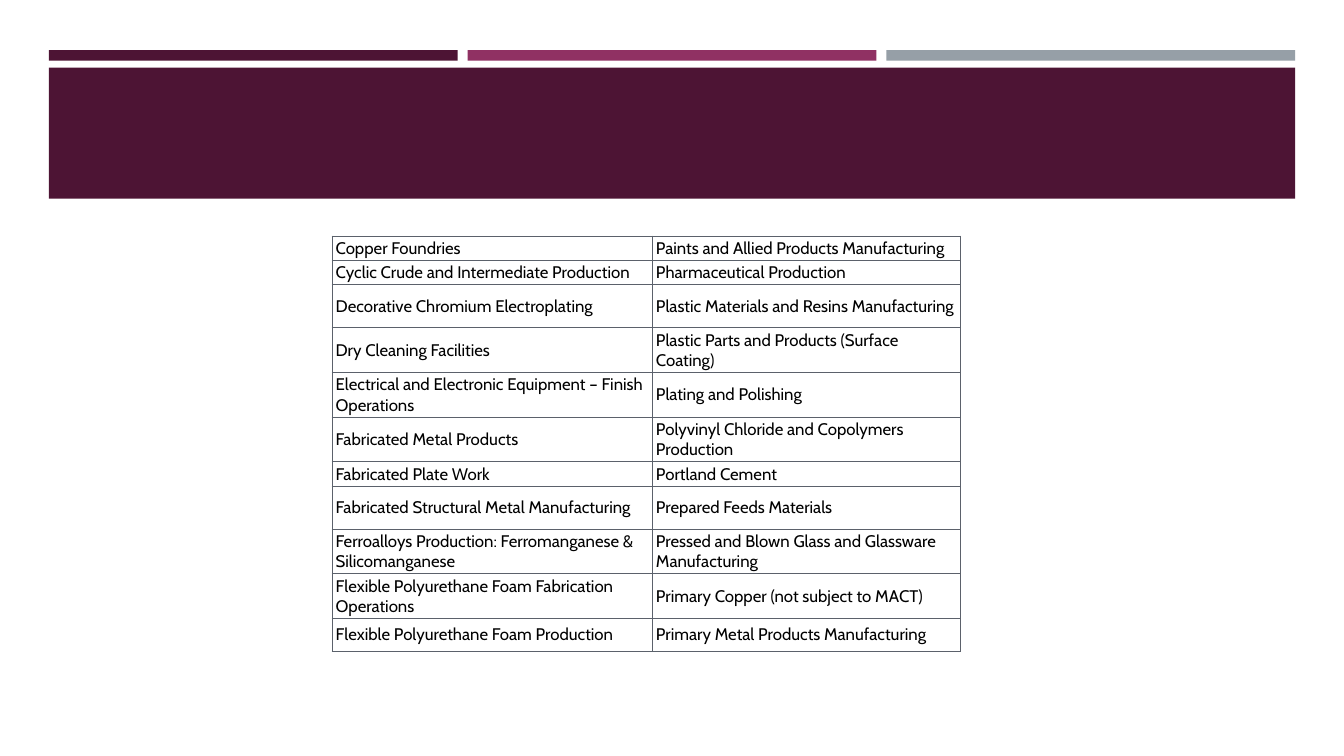
import pptx
import pptx.dml.color
import pptx.enum.shapes
import pptx.enum.text
import pptx.oxml
import pptx.oxml.ns
import pptx.util

Pt = pptx.util.Pt
RGBColor = pptx.dml.color.RGBColor

PLUM = RGBColor(0x4D, 0x14, 0x34)
MAGENTA = RGBColor(0x90, 0x31, 0x63)
SILVER = RGBColor(0x96, 0x9F, 0xA7)
SLATE = RGBColor(0x5B, 0x61, 0x6B)
BLACK = RGBColor(0, 0, 0)
WHITE = RGBColor(255, 255, 255)

FONT = "Cabin"
ONE_LINE, TWO_LINES, LAST_LINE = 17.4, 30.8, 23.3
COLUMN_WIDTHS = (228.8, 219.8)
SOURCES = [
    (ONE_LINE, "Copper Foundries", "Paints and Allied Products Manufacturing"),
    (ONE_LINE, "Cyclic Crude and Intermediate Production", "Pharmaceutical Production"),
    (TWO_LINES, "Decorative Chromium Electroplating", "Plastic Materials and Resins Manufacturing"),
    (TWO_LINES, "Dry Cleaning Facilities", "Plastic Parts and Products (Surface Coating)"),
    (TWO_LINES, "Electrical and Electronic Equipment – Finish Operations", "Plating and Polishing"),
    (TWO_LINES, "Fabricated Metal Products", "Polyvinyl Chloride and Copolymers Production"),
    (ONE_LINE, "Fabricated Plate Work", "Portland Cement"),
    (TWO_LINES, "Fabricated Structural Metal Manufacturing", "Prepared Feeds Materials"),
    (TWO_LINES, "Ferroalloys Production: Ferromanganese & Silicomanganese",
     "Pressed and Blown Glass and Glassware Manufacturing"),
    (TWO_LINES, "Flexible Polyurethane Foam Fabrication Operations", "Primary Copper (not subject to MACT)"),
    (LAST_LINE, "Flexible Polyurethane Foam Production", "Primary Metal Products Manufacturing"),
]


def add_block(page, left, top, width, height, color):
    """Draw one plain filled rectangle."""
    block = page.shapes.add_shape(
        pptx.enum.shapes.MSO_SHAPE.RECTANGLE, Pt(left), Pt(top), Pt(width), Pt(height))
    block.shadow.inherit = False
    block.fill.solid()
    block.fill.fore_color.rgb = color
    block.line.fill.background()


def add_header(page, left, top, width, height):
    """Draw three accent bars above a title band that fills the rest of the box."""
    gap, bar_height, band_offset = 7.2, 7.5, 12.4
    bar_width = (width - 2 * gap) / 3
    for index, color in enumerate((PLUM, MAGENTA, SILVER)):
        add_block(page, left + index * (bar_width + gap), top, bar_width, bar_height, color)
    add_block(page, left, top + band_offset, width, height - band_offset, PLUM)


def set_borders(cell):
    """Give a cell a thin slate line on all four sides."""
    properties = cell._tc.get_or_add_tcPr()
    namespace = pptx.oxml.ns.nsdecls("a")
    for index, side in enumerate(("lnL", "lnR", "lnT", "lnB")):
        properties.insert(index, pptx.oxml.parse_xml(
            f'<a:{side} {namespace} w="{Pt(0.75)}"><a:solidFill>'
            f'<a:srgbClr val="{SLATE}"/></a:solidFill></a:{side}>'))


def fill_cell(cell, text):
    """Write and style one table cell."""
    cell.margin_left = cell.margin_right = Pt(2.6)
    cell.margin_top = cell.margin_bottom = Pt(1.3)
    cell.vertical_anchor = pptx.enum.text.MSO_ANCHOR.MIDDLE
    cell.fill.solid()
    cell.fill.fore_color.rgb = WHITE
    span = cell.text_frame.paragraphs[0].add_run()
    span.text = text
    span.font.name = FONT
    span.font.size = Pt(12)
    span.font.bold = False
    span.font.color.rgb = BLACK
    set_borders(cell)


def add_source_table(page, left, top):
    """Place the two-column list of source categories."""
    height = sum(row[0] for row in SOURCES)
    table = page.shapes.add_table(
        len(SOURCES), len(COLUMN_WIDTHS), Pt(left), Pt(top),
        Pt(sum(COLUMN_WIDTHS)), Pt(height)).table
    table.first_row = False
    table.horz_banding = False
    for column, width in zip(table.columns, COLUMN_WIDTHS):
        column.width = Pt(width)
    for row, (row_height, *names) in zip(table.rows, SOURCES):
        row.height = Pt(row_height)
        for cell, name in zip(row.cells, names):
            fill_cell(cell, name)


def main():
    """Build the slide and save it."""
    deck = pptx.Presentation()
    deck.slide_width, deck.slide_height = Pt(960), Pt(540)
    page = deck.slides.add_slide(deck.slide_layouts[6])
    add_header(page, 34.9, 35.9, 890.2, 106)
    add_source_table(page, 237.2, 168.7)
    deck.save("out.pptx")


if __name__ == "__main__":
    main()
